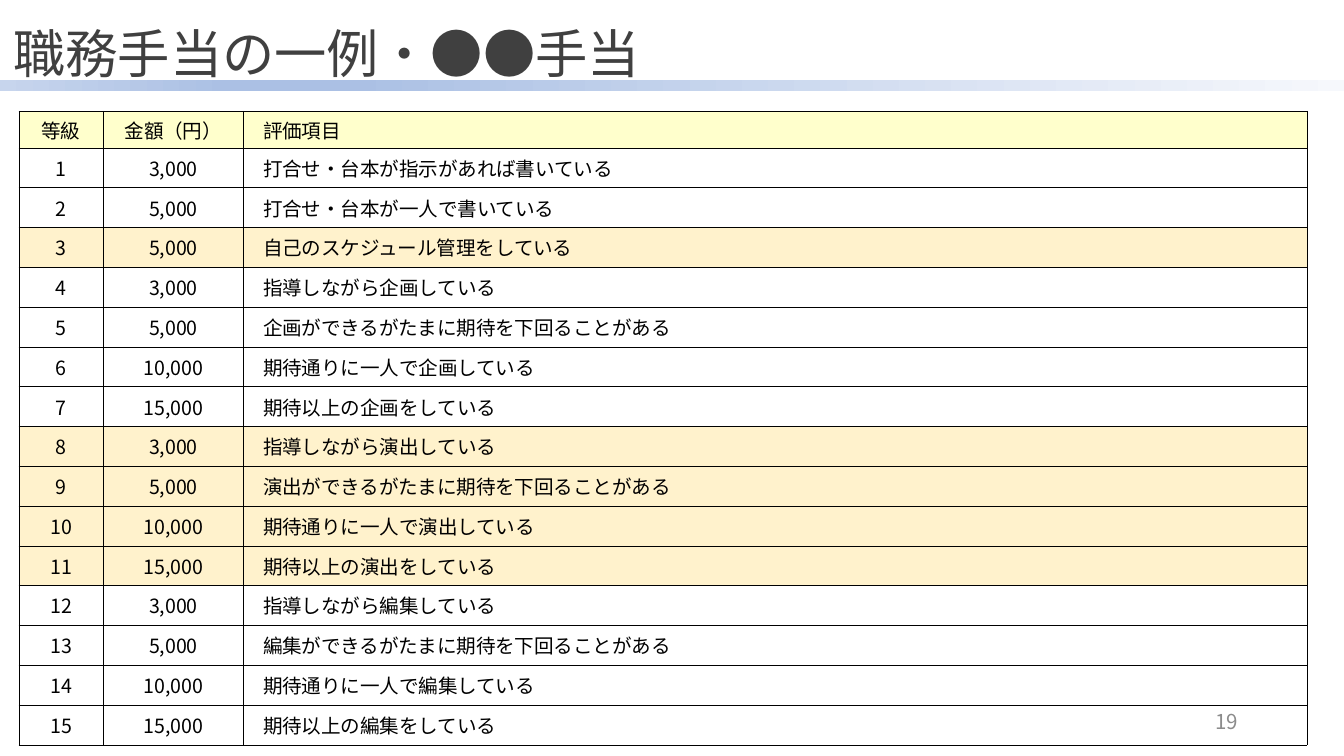
"""Build the duty allowance slide."""
from dataclasses import dataclass

from lxml import etree
from pptx import Presentation
from pptx import util as u
from pptx.dml.color import RGBColor
from pptx.enum import shapes, text
from pptx.oxml.ns import qn


@dataclass(frozen=True)
class Theme:
    """Colours, type sizes and font of the slide."""
    font: str = "Noto Sans CJK JP"
    ink: str = "000000"
    head: str = "404040"
    mute: str = "8C8C8C"
    top: str = "FFFFCC"
    band: str = "FFF2CC"
    fade: tuple = ((0, "F6F8FC"), (74, "ABC0E4"), (83, "ABC0E4"), (100, "C7D5ED"))
    big: float = 28
    cell: float = 10.5
    page: float = 11
    line: float = 0.25


T = Theme()
WIDE = u.Inches(10)
HIGH = WIDE * 9 // 16
LEFT, MID, RIGHT = text.PP_ALIGN.LEFT, text.PP_ALIGN.CENTER, text.PP_ALIGN.RIGHT
HEAD = ("等級", "金額（円）", "　評価項目")
BASE = (
    ("3,000", "打合せ・台本が指示があれば書いている", False),
    ("5,000", "打合せ・台本が一人で書いている", False),
    ("5,000", "自己のスケジュール管理をしている", True),
)
STEPS = (
    ("3,000", "指導しながら{}している"),
    ("5,000", "{}ができるがたまに期待を下回ることがある"),
    ("10,000", "期待通りに一人で{}している"),
    ("15,000", "期待以上の{}をしている"),
)
TASKS = (("企画", False), ("演出", True), ("編集", False))


def area(x, y, w, h):
    """Turn shares of the slide into a box of lengths."""
    return int(x * WIDE), int(y * HIGH), int(w * WIDE), int(h * HIGH)


def write(frame, words, size=T.cell, color=T.ink, align=LEFT, space=None):
    """Write one formatted paragraph into a text frame."""
    para = frame.paragraphs[0]
    para.alignment, para.line_spacing = align, space
    run = para.add_run()
    run.text = words
    run.font.size, run.font.name = u.Pt(size), T.font
    run.font.color.rgb = RGBColor.from_string(color)
    etree.SubElement(run.font._element, qn("a:ea"), typeface=T.font)


def edge(cell):
    """Draw thin lines on all four sides of a cell."""
    props = cell._tc.get_or_add_tcPr()
    for side in "LRTB":
        line = etree.SubElement(props, qn(f"a:ln{side}"), w=str(u.Pt(T.line)))
        fill = etree.SubElement(line, qn("a:solidFill"))
        etree.SubElement(fill, qn("a:srgbClr"), val=T.ink)


def title(slide, box):
    """Place the title in its placeholder."""
    shape = slide.shapes.title
    shape.left, shape.top, shape.width, shape.height = box
    frame = shape.text_frame
    frame.word_wrap, frame.auto_size = True, text.MSO_AUTO_SIZE.NONE
    frame.vertical_anchor = text.MSO_ANCHOR.MIDDLE
    write(frame, "職務手当の一例・●●手当", size=T.big, color=T.head, space=1.5)


def strip(slide, box):
    """Place the fading bar under the title."""
    bar = slide.shapes.add_shape(shapes.MSO_SHAPE.RECTANGLE, *box)
    bar.shadow.inherit = False
    bar.line.fill.background()
    bar.fill.gradient()
    bar.fill.gradient_angle = 180
    stops = bar._element.spPr.find(".//" + qn("a:gsLst"))
    for stop in list(stops):
        stops.remove(stop)
    for pos, color in T.fade:
        stop = etree.SubElement(stops, qn("a:gs"), pos=str(pos * 1000))
        etree.SubElement(stop, qn("a:srgbClr"), val=color)


def number(slide, box):
    """Place the page number."""
    frame = slide.shapes.add_textbox(*box).text_frame
    frame.word_wrap = True
    frame.vertical_anchor = text.MSO_ANCHOR.MIDDLE
    write(frame, "19", size=T.page, color=T.mute, align=RIGHT)


def grades():
    """List the amount, wording and shading of every grade."""
    tasks = [(pay, words.format(task), shade)
             for task, shade in TASKS for pay, words in STEPS]
    return [*BASE, *tasks]


def chart(slide, box):
    """Place the table of grades, amounts and criteria."""
    rows = [(HEAD, T.top)]
    for rank, (pay, words, shade) in enumerate(grades(), 1):
        rows.append(((str(rank), pay, "　" + words), T.band if shade else None))
    table = slide.shapes.add_table(len(rows), len(HEAD), *box).table
    table.first_row = table.horz_banding = False
    for col, share in zip(table.columns, (0.0655, 0.109, 0.8255)):
        col.width = int(box[2] * share)
    first = int(box[3] * 0.058)
    rest = (box[3] - first) // (len(rows) - 1)
    for i, (words, color) in enumerate(rows):
        table.rows[i].height = rest if i else first
        for j, word in enumerate(words):
            cell = table.cell(i, j)
            cell.margin_left = cell.margin_right = 0
            cell.margin_top = cell.margin_bottom = 0
            cell.vertical_anchor = text.MSO_ANCHOR.MIDDLE
            edge(cell)
            if color:
                cell.fill.solid()
                cell.fill.fore_color.rgb = RGBColor.from_string(color)
            else:
                cell.fill.background()
            write(cell.text_frame, word, align=MID if j < 2 else LEFT)


def main():
    """Build and save the slide."""
    deck = Presentation()
    deck.slide_width, deck.slide_height = WIDE, HIGH
    slide = deck.slides.add_slide(deck.slide_layouts[5])
    strip(slide, area(0, 0.106, 1, 0.014))
    number(slide, area(0.706, 0.927, 0.225, 0.053))
    chart(slide, area(0.014, 0.147, 0.9585, 0.839))
    title(slide, area(0, -0.015, 0.83, 0.128))
    deck.save("out.pptx")


if __name__ == "__main__":
    main()
